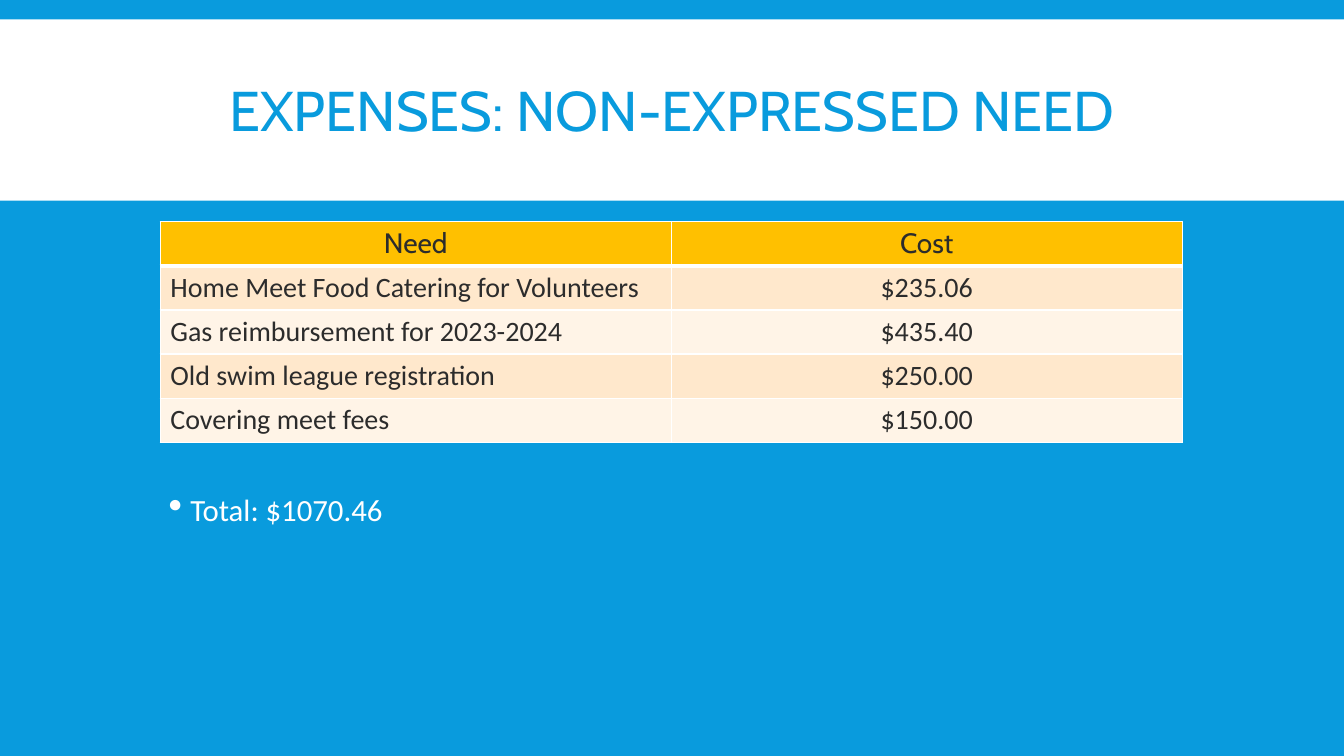
from lxml.etree import SubElement
from pptx import Presentation
from pptx.dml.color import RGBColor
from pptx.enum.shapes import MSO_SHAPE
from pptx.enum.text import MSO_ANCHOR, PP_ALIGN
from pptx.oxml.ns import qn
from pptx.util import Pt

TITLE = "EXPENSES: NON-EXPRESSED NEED"
HEADER = ("Need", "Cost")
EXPENSES = [
    ("Home Meet Food Catering for Volunteers", "$235.06"),
    ("Gas reimbursement for 2023-2024", "$435.40"),
    ("Old swim league registration", "$250.00"),
    ("Covering meet fees", "$150.00"),
]
TOTAL = "Total: $1070.46"

BLUE, WHITE, DARK, GOLD = "099BDD", "FFFFFF", "2C2C2C", "FFC000"
BANDS = ("FFE8CC", "FFF4E7")
SLIDE_W, SLIDE_H = 960, 540
LEFT, TABLE_TOP, TABLE_W, ROW_H = 114.5, 158.4, 730, 31.5
TOTAL_TOP, TOTAL_H, INDENT = 350, 36, 14.4


def paint(target, color):
    target.fill.solid()
    target.fill.fore_color.rgb = RGBColor.from_string(color)


def add_run(paragraph, text, size, font, color):
    run = paragraph.add_run()
    run.text = text
    run.font.size = Pt(size)
    run.font.name = font
    run.font.color.rgb = RGBColor.from_string(color)


def add_textbox(slide, left, top, width, height):
    frame = slide.shapes.add_textbox(Pt(left), Pt(top), Pt(width), Pt(height)).text_frame
    frame.word_wrap = True
    return frame


def set_borders(cell, widths):
    """Draw white cell edges; widths maps an edge letter to points."""
    properties = cell._tc.get_or_add_tcPr()
    for position, (edge, width) in enumerate(widths.items()):
        line = properties.makeelement(qn(f"a:ln{edge}"), {"w": str(Pt(width))})
        fill = SubElement(line, qn("a:solidFill"))
        SubElement(fill, qn("a:srgbClr"), val=WHITE)
        properties.insert(position, line)


def add_square_bullet(paragraph):
    properties = paragraph._p.get_or_add_pPr()
    properties.set("marL", str(Pt(INDENT)))
    properties.set("indent", str(-Pt(INDENT)))
    color = SubElement(properties, qn("a:buClr"))
    SubElement(color, qn("a:srgbClr"), val=WHITE)
    SubElement(properties, qn("a:buFont"), typeface="Wingdings 2")
    SubElement(properties, qn("a:buChar"), char="▪")


def add_title(slide):
    band = slide.shapes.add_shape(MSO_SHAPE.RECTANGLE, 0, Pt(13.8), Pt(SLIDE_W), Pt(129.6))
    band.shadow.inherit = False
    paint(band, WHITE)
    band.line.fill.background()

    frame = add_textbox(slide, 95, 22.3, 770, 118.8)
    frame.vertical_anchor = MSO_ANCHOR.MIDDLE
    title = frame.paragraphs[0]
    title.alignment = PP_ALIGN.CENTER
    title.line_spacing = 0.85
    add_run(title, TITLE, 40, "Cabin", BLUE)


def add_expenses(slide):
    rows = [HEADER, *EXPENSES]
    table = slide.shapes.add_table(
        len(rows), len(HEADER), Pt(LEFT), Pt(TABLE_TOP), Pt(TABLE_W), Pt(ROW_H * len(rows))
    ).table
    for r, row in enumerate(rows):
        is_header = r == 0
        for c, text in enumerate(row):
            cell = table.cell(r, c)
            paint(cell, GOLD if is_header else BANDS[(r - 1) % 2])
            set_borders(cell, {"L": 1, "R": 1, "T": 3 if r == 1 else 1, "B": 3 if is_header else 1})
            paragraph = cell.text_frame.paragraphs[0]
            paragraph.alignment = PP_ALIGN.CENTER if is_header or c else PP_ALIGN.LEFT
            add_run(paragraph, text, 20, "Cabin" if is_header else "Calibri", DARK)
            paragraph.runs[0].font.bold = False


def add_total(slide):
    total = add_textbox(slide, LEFT, TOTAL_TOP, TABLE_W, TOTAL_H).paragraphs[0]
    total.line_spacing = 0.9
    add_square_bullet(total)
    add_run(total, TOTAL, 22, "Calibri", WHITE)


def main():
    deck = Presentation()
    deck.slide_width, deck.slide_height = Pt(SLIDE_W), Pt(SLIDE_H)
    slide = deck.slides.add_slide(deck.slide_layouts[6])
    paint(slide.background, BLUE)
    add_title(slide)
    add_expenses(slide)
    add_total(slide)
    deck.save("out.pptx")


if __name__ == "__main__":
    main()
